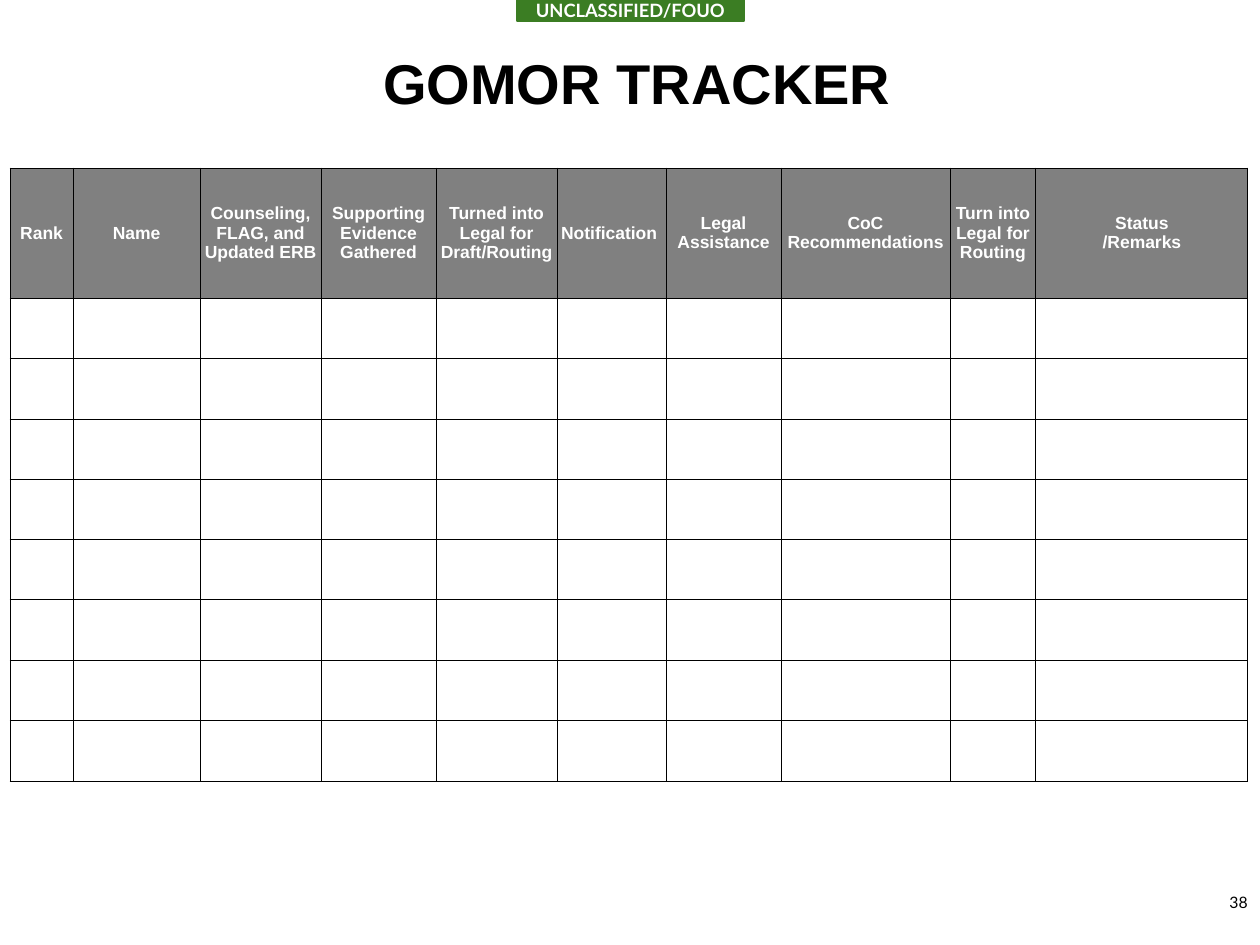
"""Build the GOMOR tracker slide."""
from dataclasses import dataclass

from lxml.etree import SubElement
from pptx import Presentation
from pptx.dml.color import RGBColor
from pptx.enum.shapes import MSO_SHAPE
from pptx.enum.text import MSO_ANCHOR, MSO_AUTO_SIZE, PP_ALIGN
from pptx.oxml.ns import qn
from pptx.slide import Slide
from pptx.table import _Cell
from pptx.text.text import TextFrame
from pptx.util import Emu, Pt

SCALE = 914400 / 126
COLORS = {"green": "3B7D23", "white": "FFFFFF", "black": "000000", "gray": "808080"}


@dataclass(frozen=True)
class Style:
    font: str
    size: float
    color: str
    bold: bool = True
    align: PP_ALIGN = PP_ALIGN.CENTER


@dataclass(frozen=True)
class Box:
    text: str
    left: int
    top: int
    width: int
    height: int
    style: Style
    anchor: MSO_ANCHOR = MSO_ANCHOR.MIDDLE
    wrap: bool = True
    fill: str = ""


@dataclass(frozen=True)
class Column:
    text: str
    width: int


HEAD = Style("Arial", 10, "white")
BOXES = (
    Box("UNCLASSIFIED/FOUO", 517, 0, 227, 21, Style("Lato", 10.5, "white"), fill="green"),
    Box("38", 977, 877, 283, 50, Style("Lato", 9, "black", False, PP_ALIGN.RIGHT)),
    Box("GOMOR TRACKER", 368, 42, 538, 81, Style("Arial", 32, "black"),
        MSO_ANCHOR.TOP, False),
)
COLUMNS = (
    Column("Rank", 63),
    Column("Name", 127),
    Column("Counseling, FLAG, and Updated ERB", 121),
    Column("Supporting Evidence Gathered", 115),
    Column("Turned into Legal for Draft/Routing", 121),
    Column("Notification ", 109),
    Column("Legal Assistance", 115),
    Column("CoC Recommendations", 169),
    Column("Turn into Legal for Routing", 86),
    Column("Status\n/Remarks", 212),
)
ROWS = (130,) + (60, 61) * 4


def px(count: int) -> Emu:
    return Emu(round(count * SCALE))


def rgb(name: str) -> RGBColor:
    return RGBColor.from_string(COLORS[name])


def write(frame: TextFrame, text: str, style: Style) -> None:
    frame.text = text
    for para in frame.paragraphs:
        para.alignment = style.align
        for run in para.runs:
            run.font.name = style.font
            run.font.size = Pt(style.size)
            run.font.bold = style.bold
            run.font.color.rgb = rgb(style.color)


def draw_box(slide: Slide, box: Box) -> None:
    place = px(box.left), px(box.top), px(box.width), px(box.height)
    if box.fill:
        shape = slide.shapes.add_shape(MSO_SHAPE.RECTANGLE, *place)
        shape.shadow.inherit = False
        shape.fill.solid()
        shape.fill.fore_color.rgb = rgb(box.fill)
        shape.line.color.rgb = rgb(box.fill)
        shape.line.width = Pt(1.5)
    else:
        shape = slide.shapes.add_textbox(*place)
    frame = shape.text_frame
    frame.word_wrap = box.wrap
    frame.vertical_anchor = box.anchor
    if not box.wrap:
        frame.auto_size = MSO_AUTO_SIZE.SHAPE_TO_FIT_TEXT
    write(frame, box.text, box.style)


def border(cell: _Cell) -> None:
    props = cell._tc.get_or_add_tcPr()
    for spot, side in enumerate(("lnL", "lnR", "lnT", "lnB")):
        line = SubElement(props, qn(f"a:{side}"), w=str(Pt(0.5)))
        fill = SubElement(line, qn("a:solidFill"))
        SubElement(fill, qn("a:srgbClr"), val=COLORS["black"])
        props.insert(spot, line)


def draw_table(slide: Slide, left: int, top: int) -> None:
    width = sum(col.width for col in COLUMNS)
    table = slide.shapes.add_table(
        len(ROWS), len(COLUMNS), px(left), px(top), px(width), px(sum(ROWS))
    ).table
    table.horz_banding = False
    for row, height in zip(table.rows, ROWS):
        row.height = px(height)
    for cell in table.iter_cells():
        cell.fill.background()
        border(cell)
    for spot, col in enumerate(COLUMNS):
        table.columns[spot].width = px(col.width)
        cell = table.cell(0, spot)
        cell.fill.solid()
        cell.fill.fore_color.rgb = rgb("gray")
        cell.vertical_anchor = MSO_ANCHOR.MIDDLE
        cell.margin_left = cell.margin_right = 0
        cell.margin_top = cell.margin_bottom = 0
        write(cell.text_frame, col.text, HEAD)


def main() -> None:
    deck = Presentation()
    deck.slide_width, deck.slide_height = px(1260), px(945)
    slide = deck.slides.add_slide(deck.slide_layouts[6])
    for box in BOXES:
        draw_box(slide, box)
    draw_table(slide, 10, 168)
    deck.save("out.pptx")


if __name__ == "__main__":
    main()
